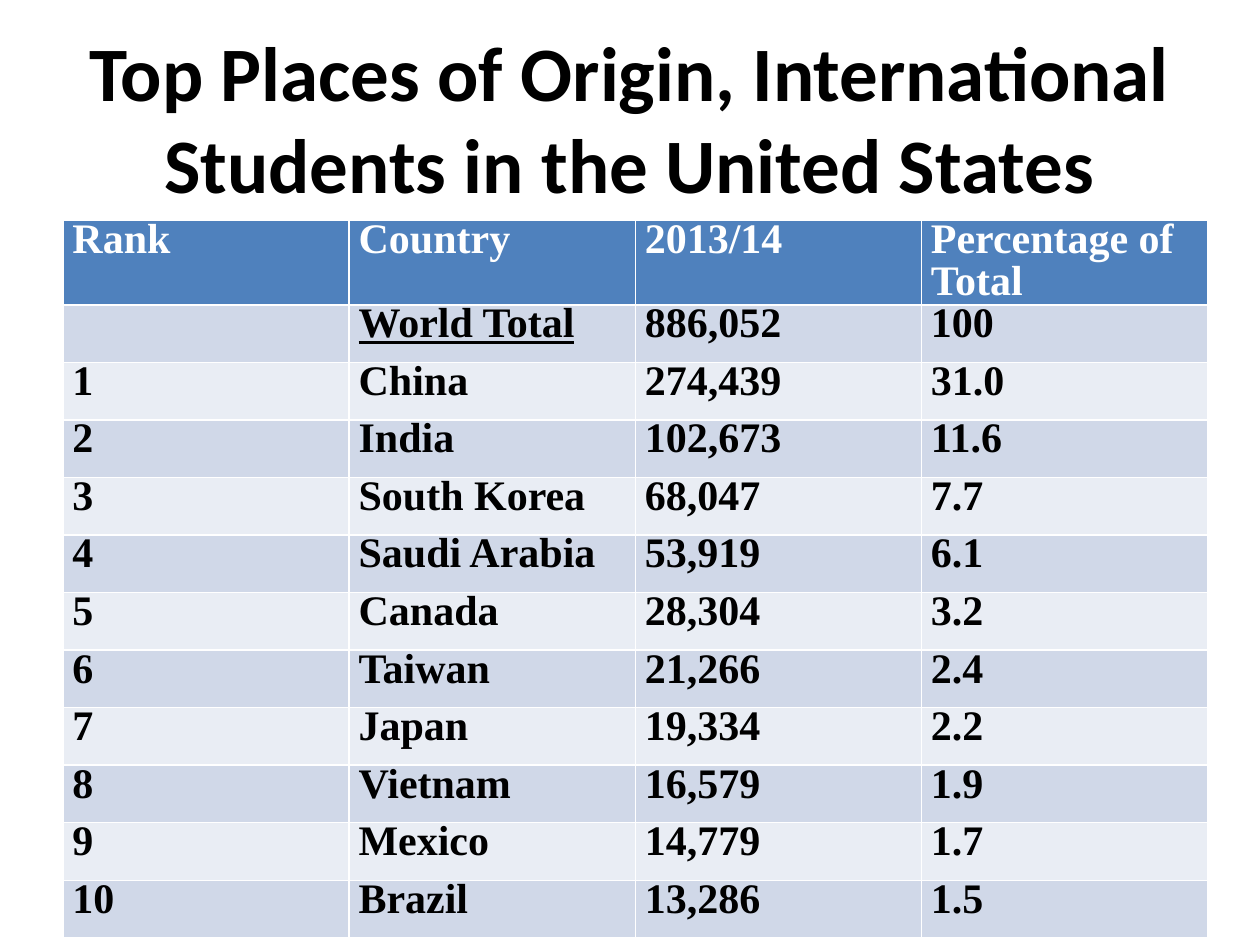
"""Build a slide ranking the top places of origin of international students in the United States."""
from dataclasses import astuple, dataclass

from pptx import Presentation
from pptx import util as u
from pptx.dml.color import RGBColor
from pptx.enum import text

COLORS = {
    "header": "4F81BD",
    "band_dark": "D0D8E8",
    "band_light": "E9EDF4",
    "header_text": "FFFFFF",
    "text": "000000",
}


@dataclass(frozen=True)
class Origin:
    rank: str
    country: str
    students: str
    share: str


HEADINGS = Origin("Rank", "Country", "2013/14", "Percentage of Total")
WORLD = Origin("", "World Total", "886,052", "100")
RANKED = [
    ("China", "274,439", "31.0"),
    ("India", "102,673", "11.6"),
    ("South Korea", "68,047", "7.7"),
    ("Saudi Arabia", "53,919", "6.1"),
    ("Canada", "28,304", "3.2"),
    ("Taiwan", "21,266", "2.4"),
    ("Japan", "19,334", "2.2"),
    ("Vietnam", "16,579", "1.9"),
    ("Mexico", "14,779", "1.7"),
    ("Brazil", "13,286", "1.5"),
]
ORIGINS = [HEADINGS, WORLD] + [Origin(str(rank), *entry) for rank, entry in enumerate(RANKED, 1)]
COLUMN_COUNT = len(astuple(HEADINGS))
COLUMN_WIDTH, ROW_HEIGHT = u.Cm(5.77), u.Cm(1.16)


def add_run(paragraph, words: str, font: str, size: int, color: str, underline: bool = False) -> None:
    """Add one bold run to a paragraph."""
    run = paragraph.add_run()
    run.text = words
    run.font.name = font
    run.font.size = u.Pt(size)
    run.font.bold = True
    run.font.color.rgb = RGBColor.from_string(COLORS[color])
    if underline:
        run.font.underline = True


def write_title(slide, words: str) -> None:
    """Place and fill the title placeholder."""
    title = slide.shapes.title
    title.left, title.top, title.width, title.height = u.Cm(1.27), u.Cm(0.76), u.Cm(22.86), u.Cm(3.18)
    frame = title.text_frame
    frame.word_wrap = True
    frame.auto_size = text.MSO_AUTO_SIZE.NONE
    frame.vertical_anchor = text.MSO_ANCHOR.MIDDLE
    heading = frame.paragraphs[0]
    heading.alignment = text.PP_ALIGN.CENTER
    add_run(heading, words, "Calibri", 44, "text")


def fill_cell(cell, words: str, fill: str, color: str, underline: bool) -> None:
    """Colour a table cell and write its text."""
    cell.fill.solid()
    cell.fill.fore_color.rgb = RGBColor.from_string(COLORS[fill])
    if not words:
        return
    cell.margin_left = cell.margin_right = u.Cm(0.19)
    cell.margin_top = cell.margin_bottom = 0
    entry = cell.text_frame.paragraphs[0]
    entry.line_spacing = u.Pt(24)
    add_run(entry, words, "Times New Roman", 24, color, underline)


def add_ranking(slide, origins: list[Origin]) -> None:
    """Add the ranking table with a header and alternating bands."""
    ranking = slide.shapes.add_table(
        len(origins), COLUMN_COUNT, u.Cm(1.27), u.Cm(4.45),
        COLUMN_WIDTH * COLUMN_COUNT, ROW_HEIGHT * len(origins),
    ).table
    for row, origin in enumerate(origins):
        is_header = origin is HEADINGS
        band = "band_dark" if row % 2 else "band_light"
        for column, words in enumerate(astuple(origin)):
            fill_cell(
                ranking.cell(row, column), words,
                "header" if is_header else band,
                "header_text" if is_header else "text",
                words == WORLD.country,
            )


def main() -> None:
    """Build and save the slide."""
    deck = Presentation()
    deck.slide_width, deck.slide_height = u.Cm(25.4), u.Cm(19.05)
    slide = deck.slides.add_slide(deck.slide_layouts[5])
    write_title(slide, "Top Places of Origin, International Students in the United States")
    add_ranking(slide, ORIGINS)
    deck.save("out.pptx")


if __name__ == "__main__":
    main()
